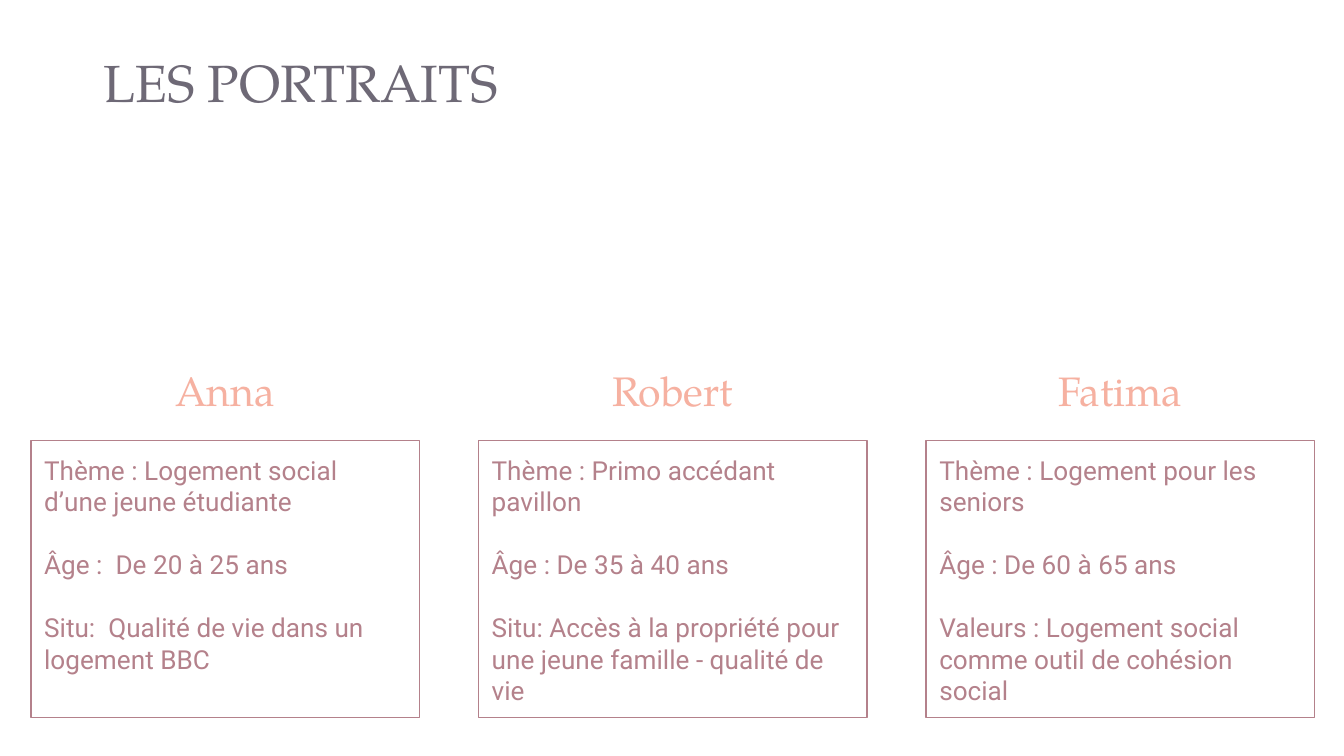
"""Build the "Les portraits" slide: three names, each above a framed profile."""
from pptx import Presentation
from pptx.dml.color import RGBColor
from pptx.enum.shapes import MSO_SHAPE
from pptx.enum.text import MSO_ANCHOR, MSO_AUTO_SIZE, PP_ALIGN
from pptx.util import Inches, Pt

COLORS = {"heading": "6E6976", "name": "F6B1A1", "profile": "B4818B", "white": "FFFFFF"}
SERIF, SANS = "TeX Gyre Pagella", "Roboto"
COLUMN_PITCH = 3.33
PORTRAITS = [
    ("Anna", [
        "Thème : Logement social d’une jeune étudiante",
        "Âge :  De 20 à 25 ans",
        "Situ:  Qualité de vie dans un logement BBC",
    ]),
    ("Robert", [
        "Thème : Primo accédant pavillon",
        "Âge : De 35 à 40 ans",
        "Situ: Accès à la propriété pour une jeune famille - qualité de vie",
    ]),
    ("Fatima", [
        "Thème : Logement pour les seniors",
        "Âge : De 60 à 65 ans",
        "Valeurs : Logement social comme outil de cohésion social",
    ]),
]


def color(key):
    return RGBColor.from_string(COLORS[key])


def write(shape, lines, font, size, key, align, anchor, inset):
    frame = shape.text_frame
    frame.word_wrap = True
    frame.auto_size = MSO_AUTO_SIZE.NONE
    frame.vertical_anchor = anchor
    frame.margin_left = frame.margin_right = Inches(inset)
    frame.margin_top = frame.margin_bottom = Inches(inset)
    for index, line in enumerate(lines):
        paragraph = frame.add_paragraph() if index else frame.paragraphs[0]
        paragraph.alignment = align
        paragraph.space_before = Pt(17 if index else 0)
        run = paragraph.add_run()
        run.text = line
        run.font.name = font
        run.font.size = Pt(size)
        run.font.color.rgb = color(key)


prs = Presentation()
prs.slide_width = Inches(10)
prs.slide_height = Inches(10 * 9 / 16)
slide = prs.slides.add_slide(prs.slide_layouts[5])
slide.background.fill.solid()
slide.background.fill.fore_color.rgb = color("white")

heading = slide.shapes.title
heading.left, heading.top = Inches(0.77), Inches(0.37)
heading.width, heading.height = Inches(3.9), Inches(0.6)
write(heading, ["LES PORTRAITS"], SERIF, 28, "heading", PP_ALIGN.LEFT, MSO_ANCHOR.TOP, 0)

for column, (person, details) in enumerate(PORTRAITS):
    offset = column * COLUMN_PITCH

    name = slide.shapes.add_shape(
        MSO_SHAPE.RECTANGLE, Inches(0.55 + offset), Inches(2.6), Inches(2.25), Inches(0.6))
    name.shadow.inherit = False
    name.fill.solid()
    name.fill.fore_color.rgb = color("white")
    name.line.fill.background()
    write(name, [person], SERIF, 22, "name", PP_ALIGN.CENTER, MSO_ANCHOR.MIDDLE, 0.1)

    profile = slide.shapes.add_shape(
        MSO_SHAPE.RECTANGLE, Inches(0.23 + offset), Inches(3.28), Inches(2.89), Inches(2.06))
    profile.shadow.inherit = False
    profile.fill.background()
    profile.line.color.rgb = color("profile")
    profile.line.width = Pt(0.75)
    write(profile, details, SANS, 14, "profile", PP_ALIGN.LEFT, MSO_ANCHOR.TOP, 0.1)

prs.save("out.pptx")
